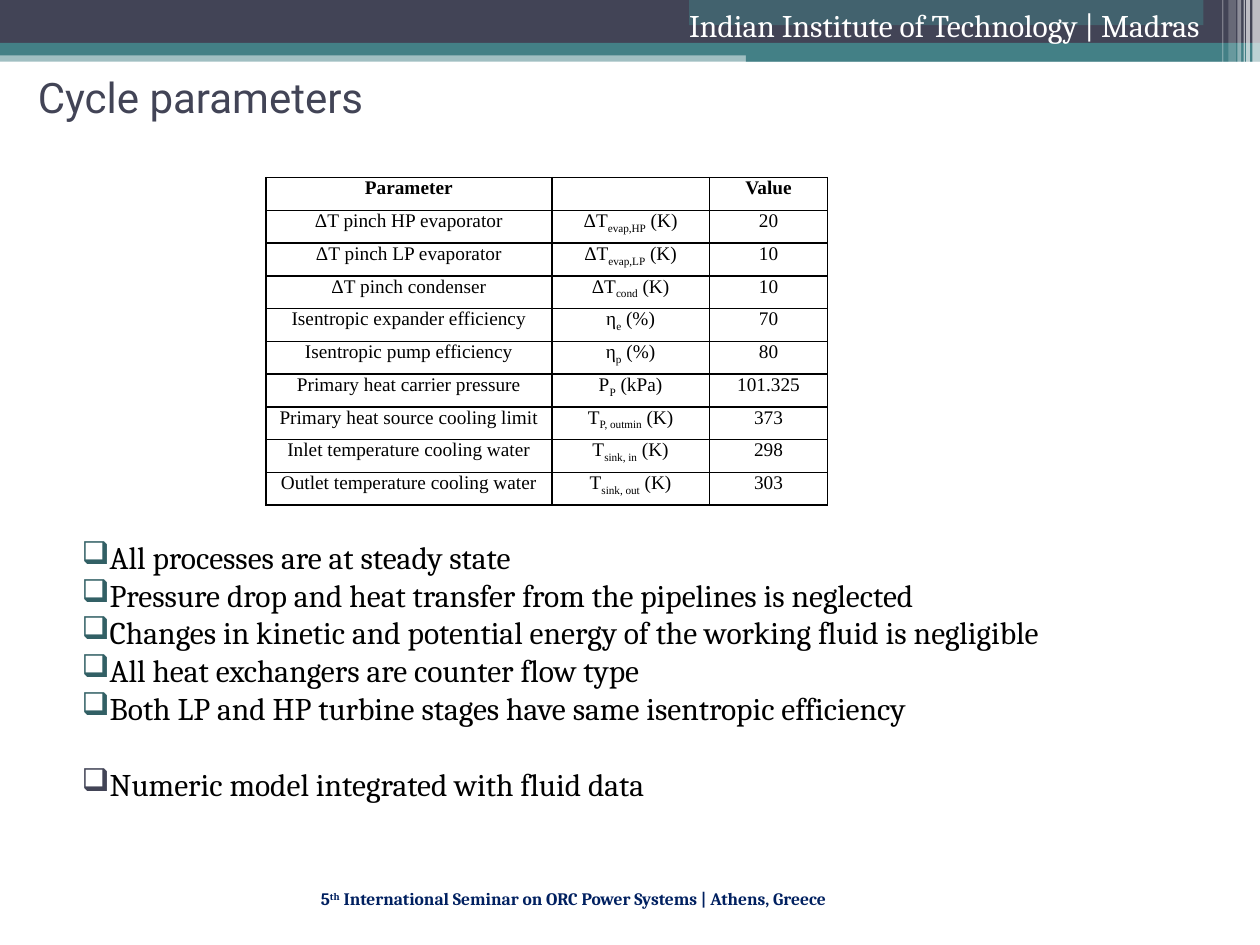
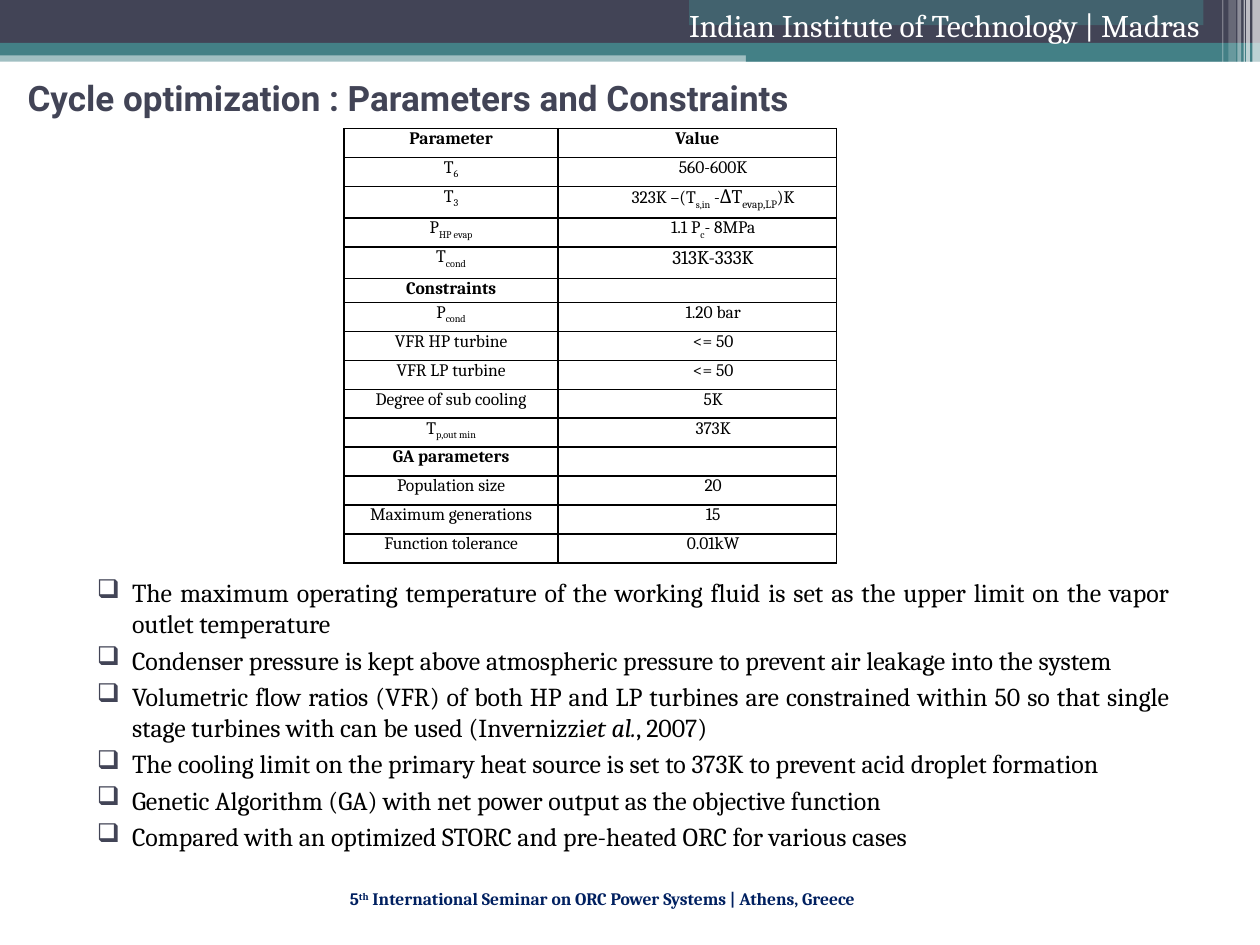
"""Build two slides on the parameters and optimization of an ORC power cycle."""
from lxml import etree
from pptx import Presentation
from pptx.dml.color import RGBColor
from pptx.enum.shapes import MSO_SHAPE
from pptx.enum.text import MSO_ANCHOR, PP_ALIGN
from pptx.oxml import parse_xml
from pptx.oxml.ns import nsdecls, qn
from pptx.util import Inches, Pt

RECT, ROUNDED = MSO_SHAPE.RECTANGLE, MSO_SHAPE.ROUNDED_RECTANGLE
TOP, MIDDLE, BOTTOM = MSO_ANCHOR.TOP, MSO_ANCHOR.MIDDLE, MSO_ANCHOR.BOTTOM
LEFT, CENTER, RIGHT, JUSTIFY = PP_ALIGN.LEFT, PP_ALIGN.CENTER, PP_ALIGN.RIGHT, PP_ALIGN.JUSTIFY

COLORS = {"slate": "424456", "teal": "438086", "deep_teal": "326065",
          "navy": "002060", "white": "FFFFFF", "black": "000000"}
SUBSCRIPT = {"baseline": "-25000"}
SUPERSCRIPT = {"baseline": "30000"}
ITALIC = {"i": "1"}

BANDS = [
    (RECT, 0, 0.4, 10, 0.09, "teal", 50),
    (RECT, 0, 0, 10, 0.34, "slate", 100),
    (RECT, 0, 0.34, 10, 0.1, "teal", 100),
    (RECT, 5.92, 0.39, 4.08, 0.1, "teal", 100),
    (RECT, 5.47, 0, 4.08, 0.2, "teal", 50),
    (ROUNDED, 5.91, 0.54, 3.35, 0.03, "white", 100),
    (ROUNDED, 8.06, 0.64, 1.75, 0.04, "white", 100),
    (RECT, 9.94, 0, 0.06, 0.68, "white", 65),
    (RECT, 9.89, 0, 0.03, 0.68, "white", 65),
    (RECT, 9.87, 0, 0.01, 0.68, "white", 60),
    (RECT, 9.82, 0, 0.03, 0.68, "white", 40),
    (RECT, 9.75, 0, 0.06, 0.64, "white", 20),
    (RECT, 9.7, 0, 0.01, 0.64, "white", 30),
]

SLIDES = [
    {
        "title": "Cycle parameters", "title_size": 24, "title_bold": False, "title_inset": 0.18,
        "footer_width": 5.79,
        "table_at": (2.11, 1.41), "columns": [2.27, 1.25, 0.94], "row_heights": [0.26] * 10,
        "table_font": "Times New Roman", "table_size": 11, "cell_inset": 0.07, "value_indent": 0,
        "headings": ["Parameter"], "larger": {},
        "rows": [
            ("Parameter", "", "Value"),
            ("ΔT pinch HP evaporator", "ΔT~evap,HP~ (K)", "20"),
            ("ΔT pinch LP evaporator", "ΔT~evap,LP~ (K)", "10"),
            ("ΔT pinch condenser", "ΔT~cond~ (K)", "10"),
            ("Isentropic expander efficiency", "η~e~ (%)", "70"),
            ("Isentropic pump efficiency", "η~p~ (%)", "80"),
            ("Primary heat carrier pressure", "P~P~ (kPa)", "101.325"),
            ("Primary heat source cooling limit", "T~P, outmin~ (K)", "373"),
            ("Inlet temperature cooling water", "T~sink, in~ (K)", "298"),
            ("Outlet temperature cooling water", "T~sink, out~ (K)", "303"),
        ],
        "notes_at": (0.55, 4.22, 8.83, 2.73), "notes_size": 18, "notes_align": LEFT,
        "notes_indent": (0, 0), "notes_gap": 0,
        "notes": [
            ("All processes are at steady state", "deep_teal"),
            ("Pressure drop and heat transfer from the pipelines is neglected", "deep_teal"),
            ("Changes in kinetic and potential energy of the working fluid is negligible", "deep_teal"),
            ("All heat exchangers are counter flow type", "deep_teal"),
            ("Both LP and HP turbine stages have same isentropic efficiency", "deep_teal"),
            ("Numeric model integrated with fluid data", "slate"),
        ],
        "last_note_gap": 21.6,
    },
    {
        "title": "Cycle optimization : Parameters and Constraints",
        "title_size": 20, "title_bold": True, "title_inset": 0.1,
        "footer_width": 6.02,
        "table_at": (2.73, 1.02), "columns": [1.7, 2.21],
        "row_heights": [0.23, 0.23, 0.25, 0.23, 0.25, 0.19] + [0.23] * 9,
        "table_font": "Cambria", "table_size": 10, "cell_inset": 0.05, "value_indent": 0.25,
        "headings": ["Parameter", "Constraints", "GA parameters"],
        "larger": {2: slice(3, 5), 4: slice(0, 1)},
        "rows": [
            ("Parameter", "Value"),
            ("T~6", "560-600K"),
            ("T~3", "323K –(T~s,in~ -~~ΔT~evap,LP~)K"),
            ("P~HP evap", "1.1 P~c~- 8MPa"),
            ("T~cond", "313K-333K"),
            ("Constraints", ""),
            ("P~cond", "1.20 bar"),
            ("VFR HP turbine", "<= 50"),
            ("VFR LP turbine", "<= 50"),
            ("Degree of sub cooling", "5K"),
            ("T~p,out min", "373K"),
            ("GA parameters", ""),
            ("Population size", "20"),
            ("Maximum generations", "15"),
            ("Function tolerance", "0.01kW"),
        ],
        "notes_at": (0.55, 4.53, 8.83, 2.42), "notes_size": 14.8, "notes_align": JUSTIFY,
        "notes_indent": (0.4, -0.28), "notes_gap": 3,
        "notes": [
            ("The maximum operating temperature of the working fluid is set as the upper limit "
             "on the vapor outlet temperature", "slate"),
            ("Condenser pressure is kept above atmospheric pressure to prevent air leakage "
             "into the system", "slate"),
            ("Volumetric flow ratios (VFR) of both HP and LP turbines are constrained within 50 "
             "so that single stage turbines with can be used (Invernizzi~et al.~, 2007)", "slate"),
            ("The cooling limit on the primary heat source is set to 373K to prevent acid "
             "droplet formation", "slate"),
            ("Genetic Algorithm (GA) with net power output as the objective function", "slate"),
            ("Compared with an optimized STORC and pre-heated ORC for various cases", "slate"),
        ],
        "last_note_gap": 3,
    },
]


def write(paragraph, text, size, color, font="Cambria", bold=False, align=LEFT, marked=SUBSCRIPT):
    """Fill a paragraph; every second part between tildes takes the marked run attributes."""
    paragraph.alignment = align
    paragraph.font.name = font
    paragraph.font.size = Pt(size)
    paragraph.font.bold = bold
    paragraph.font.color.rgb = RGBColor.from_string(COLORS[color])
    for index, part in enumerate(text.split("~")):
        if part:
            run = paragraph.add_run()
            run.text = part
            if index % 2:
                for key, value in marked.items():
                    run.font._element.set(key, value)


def add_frame(slide, left, top, width, height, anchor=TOP):
    """Add a wrapping text box and return its text frame."""
    frame = slide.shapes.add_textbox(
        Inches(left), Inches(top), Inches(width), Inches(height)).text_frame
    frame.word_wrap = True
    frame.vertical_anchor = anchor
    return frame


prs = Presentation()
prs.slide_width, prs.slide_height = Inches(10), Inches(7.5)

for content in SLIDES:
    slide = prs.slides.add_slide(prs.slide_layouts[6])

    for kind, left, top, width, height, color, opacity in BANDS:
        band = slide.shapes.add_shape(kind, Inches(left), Inches(top), Inches(width), Inches(height))
        band.shadow.inherit = False
        band.line.fill.background()
        band.fill.solid()
        band.fill.fore_color.rgb = RGBColor.from_string(COLORS[color])
        if opacity < 100:
            tint = band._element.spPr.find(qn("a:solidFill"))[0]
            etree.SubElement(tint, qn("a:alpha")).set("val", str(opacity * 1000))

    institute = add_frame(slide, 4.53, 0, 5.09, 0.4, BOTTOM)
    write(institute.paragraphs[0], "Indian Institute of Technology | Madras", 18, "white", align=RIGHT)

    footer = add_frame(slide, 0.86, 7, content["footer_width"], 0.5)
    write(footer.paragraphs[0], "5~th~ International Seminar on ORC Power Systems | Athens, Greece",
          10, "navy", bold=True, align=RIGHT, marked=SUPERSCRIPT)

    title = add_frame(slide, 0.12, 0.42, 8.82, 0.7, MIDDLE)
    title.margin_left = Inches(content["title_inset"])
    write(title.paragraphs[0], content["title"], content["title_size"], "slate",
          font="Roboto", bold=content["title_bold"])

    notes = add_frame(slide, *content["notes_at"])
    margin, indent = content["notes_indent"]
    for index, (note, bullet_color) in enumerate(content["notes"]):
        paragraph = notes.add_paragraph() if index else notes.paragraphs[0]
        if index:
            last = index == len(content["notes"]) - 1
            paragraph.space_before = Pt(content["last_note_gap" if last else "notes_gap"])
        properties = paragraph._p.get_or_add_pPr()
        properties.set("marL", str(Inches(margin)))
        properties.set("indent", str(Inches(indent)))
        bullet_tint = etree.SubElement(properties, qn("a:buClr"))
        etree.SubElement(bullet_tint, qn("a:srgbClr")).set("val", COLORS[bullet_color])
        etree.SubElement(properties, qn("a:buChar")).set("char", "❑")
        write(paragraph, note, content["notes_size"], "black",
              align=content["notes_align"], marked=ITALIC)

    rows, columns, heights = content["rows"], content["columns"], content["row_heights"]
    left, top = content["table_at"]
    parameters = slide.shapes.add_table(
        len(rows), len(columns), Inches(left), Inches(top),
        Inches(sum(columns)), Inches(sum(heights))).table
    parameters.first_row = parameters.horz_banding = False
    for column, width in zip(parameters.columns, columns):
        column.width = Inches(width)
    for r, (row, height) in enumerate(zip(rows, heights)):
        parameters.rows[r].height = Inches(height)
        for c, text in enumerate(row):
            cell = parameters.cell(r, c)
            cell.margin_left = cell.margin_right = Inches(content["cell_inset"])
            cell.margin_top = cell.margin_bottom = 0
            cell_properties = cell._tc.get_or_add_tcPr()
            for side in ("lnL", "lnR", "lnT", "lnB"):
                cell_properties.append(parse_xml(
                    f'<a:{side} {nsdecls("a")} w="{Pt(1)}"><a:solidFill>'
                    f'<a:srgbClr val="{COLORS["black"]}"/></a:solidFill></a:{side}>'))
            cell.fill.background()
            paragraph = cell.text_frame.paragraphs[0]
            if r and c:
                paragraph._p.get_or_add_pPr().set("marL", str(Inches(content["value_indent"])))
            write(paragraph, text, content["table_size"], "black", font=content["table_font"],
                  bold=row[0] in content["headings"], align=CENTER)
            if not text:
                paragraph._p.get_or_add_endParaRPr().set("sz", str(content["table_size"] * 100))
    for r, part in content["larger"].items():
        for run in parameters.cell(r, 1).text_frame.paragraphs[0].runs[part]:
            run.font.size = Pt(11)

prs.save("out.pptx")
